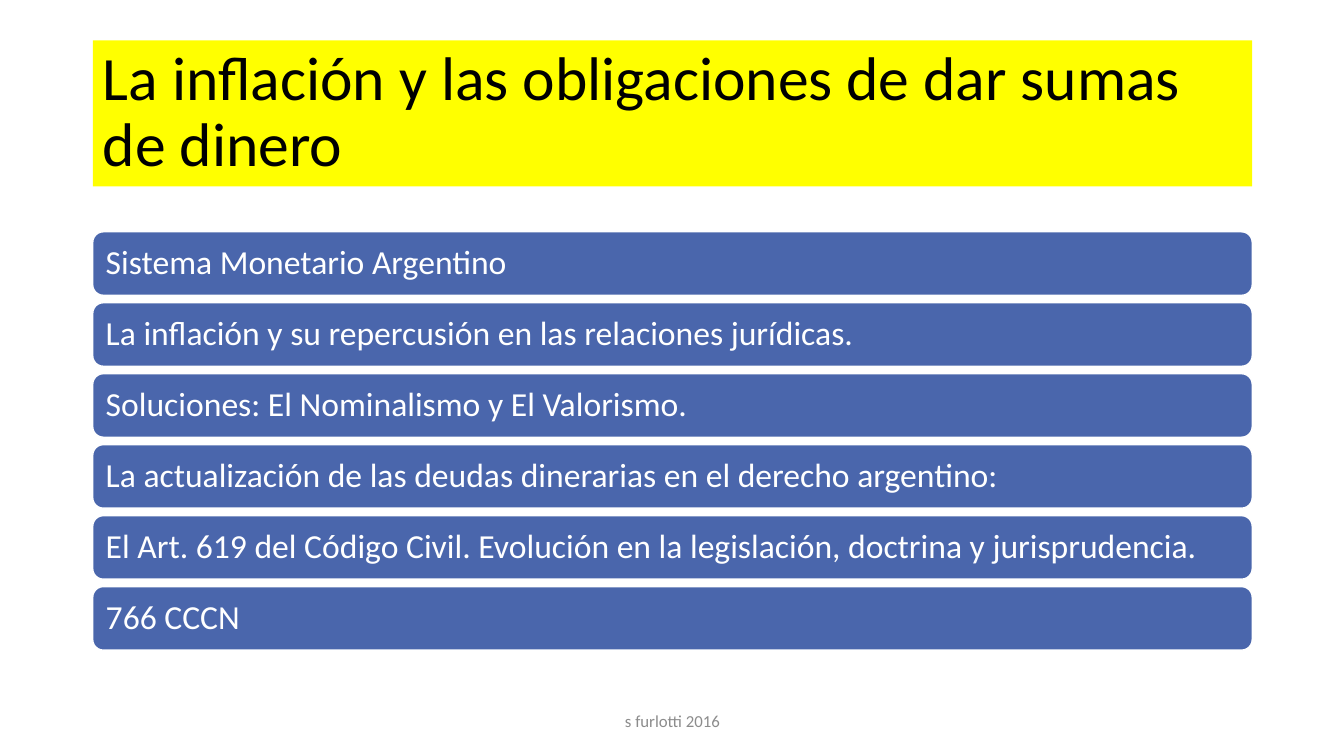
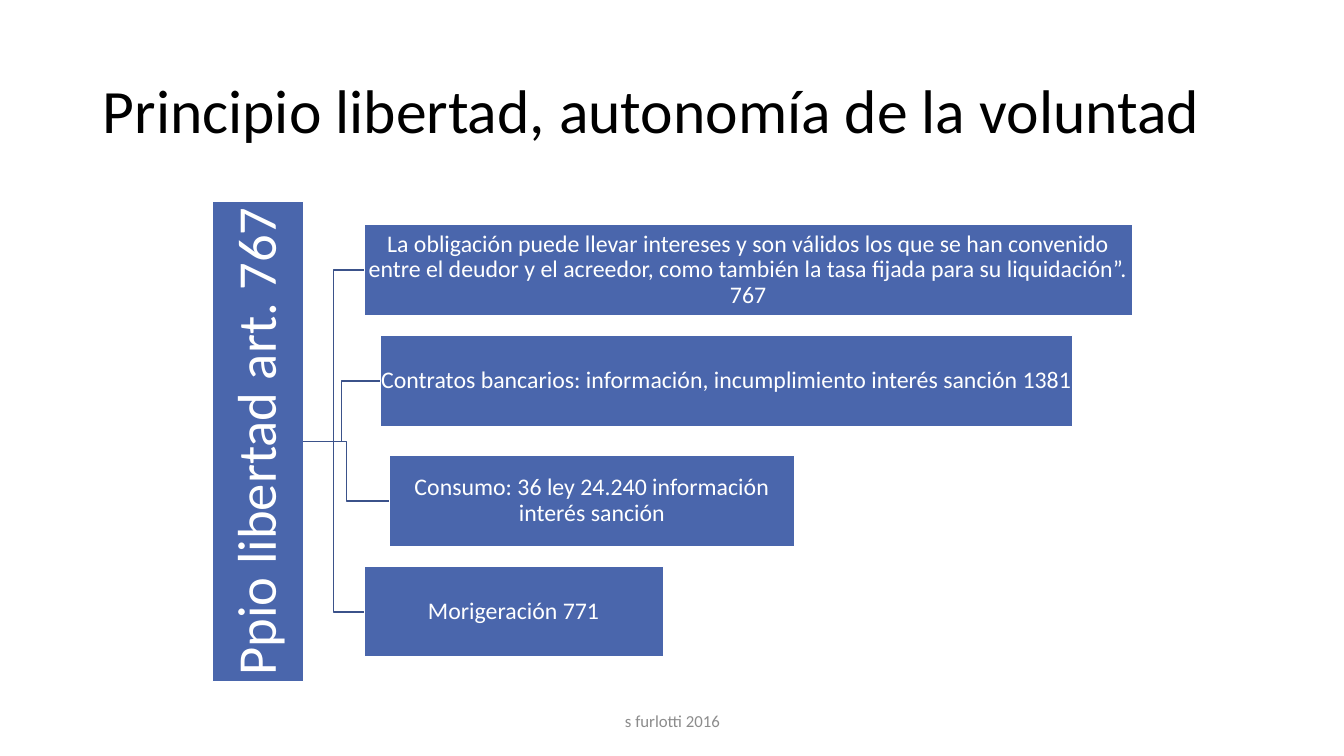
"""Builds two slides on inflation and money obligations."""
from dataclasses import dataclass

from lxml import etree
from pptx import Presentation
from pptx import util as u
from pptx.dml.color import RGBColor
from pptx.enum import shapes, text
from pptx.oxml.ns import qn

In = u.Inches


@dataclass(frozen=True)
class Theme:
    font: str = "Calibri"
    ink: str = "000000"
    white: str = "FFFFFF"
    box: str = "4A66AC"
    branch: str = "3B528A"
    highlight: str = "FFFF00"
    muted: str = "8C8C8C"
    title: float = 44
    trunk: float = 39
    bar: float = 24
    leaf: float = 17
    footer: float = 12
    line: float = 1


def write(sp, words, *, size, color, font, align=text.PP_ALIGN.LEFT,
          spacing=None, inset=None):
    tf = sp.text_frame
    tf.word_wrap = True
    tf.auto_size = text.MSO_AUTO_SIZE.NONE
    tf.vertical_anchor = text.MSO_ANCHOR.MIDDLE
    if inset is not None:
        tf.margin_left = tf.margin_right = In(inset)
        tf.margin_top = tf.margin_bottom = In(inset)
    p = tf.paragraphs[0]
    p.alignment = align
    p.line_spacing = spacing
    r = p.add_run()
    r.text = words
    r.font.name = font
    r.font.size = u.Pt(size)
    r.font.color.rgb = RGBColor.from_string(color)


class Deck:
    def __init__(self, theme):
        self.theme = theme
        self.prs = Presentation()
        self.prs.slide_width, self.prs.slide_height = In(13.33), In(7.5)
        self.s = None

    def slide(self, title, fill=None):
        t = self.theme
        self.s = self.prs.slides.add_slide(self.prs.slide_layouts[5])
        sp = self.s.shapes.title
        sp.left, sp.top, sp.width, sp.height = In(0.92), In(0.4), In(11.5), In(1.45)
        if fill:
            sp.fill.solid()
            sp.fill.fore_color.rgb = RGBColor.from_string(fill)
        write(sp, title, size=t.title, color=t.ink, font=t.font, spacing=0.9)
        self.footer("s furlotti 2016")

    def footer(self, words):
        t = self.theme
        sp = self.s.shapes.add_textbox(In(4.42), In(6.95), In(4.5), In(0.4))
        write(sp, words, size=t.footer, color=t.muted, font=t.font,
              align=text.PP_ALIGN.CENTER)

    def box(self, words, left, top, width, height, *, size, inset,
            kind=shapes.MSO_SHAPE.RECTANGLE, align=text.PP_ALIGN.CENTER,
            upright=False):
        t = self.theme
        sp = self.s.shapes.add_shape(kind, In(left), In(top), In(width), In(height))
        sp.shadow.inherit = False
        sp.fill.solid()
        sp.fill.fore_color.rgb = RGBColor.from_string(t.box)
        sp.line.color.rgb = RGBColor.from_string(t.white)
        sp.line.width = u.Pt(t.line)
        write(sp, words, size=size, color=t.white, font=t.font, align=align,
              spacing=0.9, inset=inset)
        if upright:
            sp.text_frame._txBody.find(qn("a:bodyPr")).set("vert", "vert270")
        return sp

    def branch(self, trunk, leaf):
        c = self.s.shapes.add_connector(shapes.MSO_CONNECTOR.ELBOW, 0, 0, 0, 0)
        c.begin_connect(trunk, 3)
        c.end_connect(leaf, 1)
        c.line.color.rgb = RGBColor.from_string(self.theme.branch)
        c.line.width = u.Pt(self.theme.line)
        etree.SubElement(c._element.spPr, qn("a:effectLst"))


def topics_slide(deck):
    deck.slide("La inflación y las obligaciones de dar sumas de dinero",
               fill=deck.theme.highlight)
    topics = [
        "Sistema Monetario Argentino",
        "La inflación y su repercusión en las relaciones jurídicas.",
        "Soluciones: El Nominalismo y El Valorismo.",
        "La actualización de las deudas dinerarias en el derecho argentino:",
        "El Art. 619 del Código Civil. Evolución en la legislación, doctrina y jurisprudencia.",
        "766 CCCN",
    ]
    top, bottom, height = 2.3, 6.45, 0.63
    pitch = (bottom - top - height) / (len(topics) - 1)
    for i, topic in enumerate(topics):
        deck.box(topic, 0.92, top + i * pitch, 11.5, height,
                 size=deck.theme.bar, inset=0.1, align=text.PP_ALIGN.LEFT,
                 kind=shapes.MSO_SHAPE.ROUNDED_RECTANGLE)


def freedom_slide(deck):
    deck.slide("Principio libertad, autonomía de la voluntad")
    thickness = 0.9
    trunk = deck.box("Ppio libertad art. 767", 2.11, 2, thickness, 4.76,
                     size=deck.theme.trunk, inset=0.03, upright=True)
    leaves = [
        ("La obligación puede llevar intereses y son válidos los que se han "
         "convenido entre el deudor y el acreedor, como también la tasa fijada "
         "para su liquidación”. 767", 3.61, 2.23, 7.62),
        ("Contratos bancarios: información, incumplimiento interés sanción 1381",
         3.77, 3.33, 6.87),
        ("Consumo: 36 ley 24.240 información interés sanción", 3.86, 4.52, 4.02),
        ("Morigeración 771", 3.61, 5.62, 2.97),
    ]
    for words, left, top, width in leaves:
        leaf = deck.box(words, left, top, width, thickness,
                        size=deck.theme.leaf, inset=0.01)
        deck.branch(trunk, leaf)


def main():
    deck = Deck(Theme())
    topics_slide(deck)
    freedom_slide(deck)
    deck.prs.save("out.pptx")


if __name__ == "__main__":
    main()
